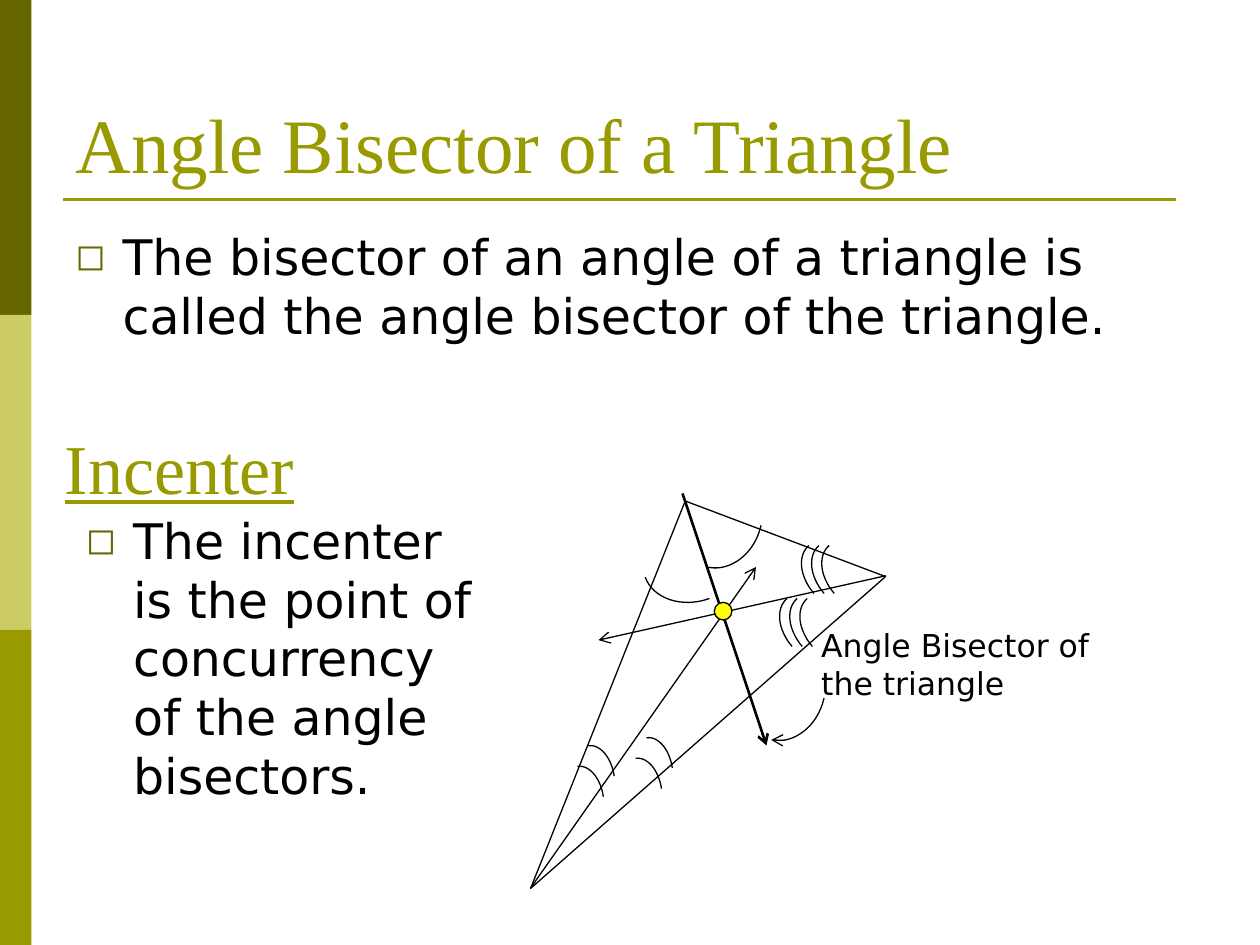
import pptx
import pptx.util
import pptx.dml.color
import pptx.enum.shapes
import pptx.enum.text
import pptx.oxml
import pptx.oxml.ns
from dataclasses import dataclass
from lxml import etree

Pt = pptx.util.Pt
Kind = pptx.enum.shapes.MSO_SHAPE
Anchor = pptx.enum.text.MSO_ANCHOR
qn = pptx.oxml.ns.qn


@dataclass(frozen=True)
class Theme:
    dark: str = "666600"
    pale: str = "CCCC66"
    olive: str = "999900"
    ink: str = "000000"
    paper: str = "FFFFFF"
    dot: str = "FFFF0A"
    serif: str = "Times New Roman"
    sans: str = "DejaVu Sans"
    title: int = 44
    head: int = 40
    body: int = 28
    label: int = 18
    thin: float = 0.75
    bold: float = 1.5


THEME = Theme()


def tint(code):
    return pptx.dml.color.RGBColor.from_string(code)


def write(shape, text, font, size, color, anchor=Anchor.TOP):
    frame = shape.text_frame
    frame.text = text
    frame.word_wrap = True
    frame.auto_size = pptx.enum.text.MSO_AUTO_SIZE.NONE
    frame.vertical_anchor = anchor
    para = frame.paragraphs[0]
    para.alignment = pptx.enum.text.PP_ALIGN.LEFT
    face = para.runs[0].font
    face.name, face.size, face.color.rgb = font, Pt(size), tint(color)
    return para


def add_text(slide, box, *style):
    shape = slide.shapes.add_textbox(*map(Pt, box))
    return write(shape, *style)


def add_block(slide, kind, box, fill, edge=None):
    shape = slide.shapes.add_shape(kind, *map(Pt, box))
    shape.shadow.inherit = False
    shape.fill.solid()
    shape.fill.fore_color.rgb = tint(fill)
    if edge:
        stroke(shape, edge, THEME.thin)
    else:
        shape.line.fill.background()
    return shape


def stroke(shape, color, width, arrow=False):
    shape.line.color.rgb = tint(color)
    shape.line.width = Pt(width)
    if arrow:
        line = shape._element.spPr.find(qn("a:ln"))
        etree.SubElement(line, qn("a:tailEnd"), type="arrow")


def add_line(slide, start, end, color, width, arrow=False):
    line = slide.shapes.add_connector(
        pptx.enum.shapes.MSO_CONNECTOR.STRAIGHT, *map(Pt, start + end))
    stroke(line, color, width, arrow)
    etree.SubElement(line._element.spPr, qn("a:effectLst"))


def add_curve(slide, start, bend, arrow=False, steps=16):
    dots = []
    for step in range(steps + 1):
        t = step / steps
        parts = (3 * t * (1 - t) ** 2, 3 * t ** 2 * (1 - t), t ** 3)
        dots.append(tuple(
            Pt(start[axis] + sum(w * p[axis] for w, p in zip(parts, bend)))
            for axis in (0, 1)))
    pen = slide.shapes.build_freeform(*dots[0], scale=1.0)
    pen.add_line_segments(dots[1:], close=False)
    curve = pen.convert_to_shape()
    curve.shadow.inherit = False
    curve.fill.background()
    stroke(curve, THEME.ink, THEME.thin, arrow)


def add_side(slide, box):
    left, top, width, height = box
    part = height / 3
    for row, color in enumerate((THEME.dark, THEME.pale, THEME.olive)):
        add_block(slide, Kind.RECTANGLE,
                  (left, top + row * part, width, part), color)


def add_title(slide, box, text):
    left, top, width, height = box
    title = slide.shapes.title
    title.left, title.top, title.width, title.height = map(Pt, box)
    write(title, text, THEME.serif, THEME.title, THEME.olive, Anchor.BOTTOM)
    rule = top + height + 2.4
    add_line(slide, (left, rule), (left + width - 12, rule),
             THEME.olive, THEME.bold)


def add_head(slide, box, text):
    para = add_text(slide, box, text, THEME.serif, THEME.head,
                    THEME.olive, Anchor.BOTTOM)
    para.runs[0].font.underline = True


def add_point(slide, box, text):
    para = add_text(slide, box, text, THEME.sans, THEME.body, THEME.ink)
    props = para._p.get_or_add_pPr()
    props.set("marL", str(Pt(27)))
    props.set("indent", str(Pt(-27)))
    color = etree.SubElement(props, qn("a:buClr"))
    etree.SubElement(color, qn("a:srgbClr"), val=THEME.dark)
    etree.SubElement(props, qn("a:buSzPct"), val="75000")
    etree.SubElement(props, qn("a:buFont"), typeface=THEME.sans)
    etree.SubElement(props, qn("a:buChar"), char="◻")


def add_figure(slide, box, text):
    left, top = box[:2]

    def at(x, y):
        return left + x, top + y

    shape = add_block(slide, Kind.ISOSCELES_TRIANGLE,
                      at(0, 44) + (270, 108), THEME.paper, THEME.ink)
    shape.adjustments[0] = 0.787
    shape.rotation = 318.7

    rays = (((156, 2), (204, 146), THEME.bold),
            ((69.1, 227.6), (198, 44), THEME.thin),
            ((272.2, 49), (108, 85.8), THEME.thin))
    for start, end, width in rays:
        add_line(slide, at(*start), at(*end), THEME.ink, width, True)

    wide = ((-3.6, 16.2), (-17.3, 26.6), (-30.2, 24))
    flat = ((-15.8, 5.8), (-32.4, 0), (-36.7, -12.2))
    low = ((6.8, -1.1), (13.3, 6.8), (14.8, 17.3))
    tall = ((-8.2, -9.6), (-9.5, -21.6), (-2.9, -27.4))
    add_curve(slide, at(200.9, 20.2), wide)
    add_curve(slide, at(171.4, 62), flat)
    add_curve(slide, at(236.9, 118.9), wide, True)
    for x, y in ((102.2, 146.2), (135.4, 141.6)):
        for row in range(2):
            add_curve(slide, at(x - 6.2 * row, y + 11.8 * row), low)
    for x, y in ((231.1, 59.1), (218.6, 89.4)):
        for col in range(3):
            add_curve(slide, at(x + 5.8 * col, y), tall)

    add_block(slide, Kind.OVAL, at(174.2, 64.2) + (10.1, 10.1),
              THEME.dot, THEME.ink)
    add_text(slide, at(228.2, 74.2) + (185.8, 50.4), text,
             THEME.sans, THEME.label, THEME.ink)


def main():
    deck = pptx.Presentation()
    deck.slide_width, deck.slide_height = Pt(720), Pt(540)
    slide = deck.slides.add_slide(deck.slide_layouts[5])
    add_side(slide, (0, 0, 18, 540))
    add_title(slide, (36, 21.6, 648, 90), "Angle Bisector of a Triangle")
    add_point(slide, (36, 126, 648, 108),
              "The bisector of an angle of a triangle is called "
              "the angle bisector of the triangle.")
    add_figure(slide, (234, 280, 414, 230), "Angle Bisector of the triangle")
    add_head(slide, (30, 240, 150, 54), "Incenter")
    add_point(slide, (42, 288, 246, 234),
              "The incenter is the point of concurrency "
              "of the angle bisectors.")
    deck.save("out.pptx")


if __name__ == "__main__":
    main()
